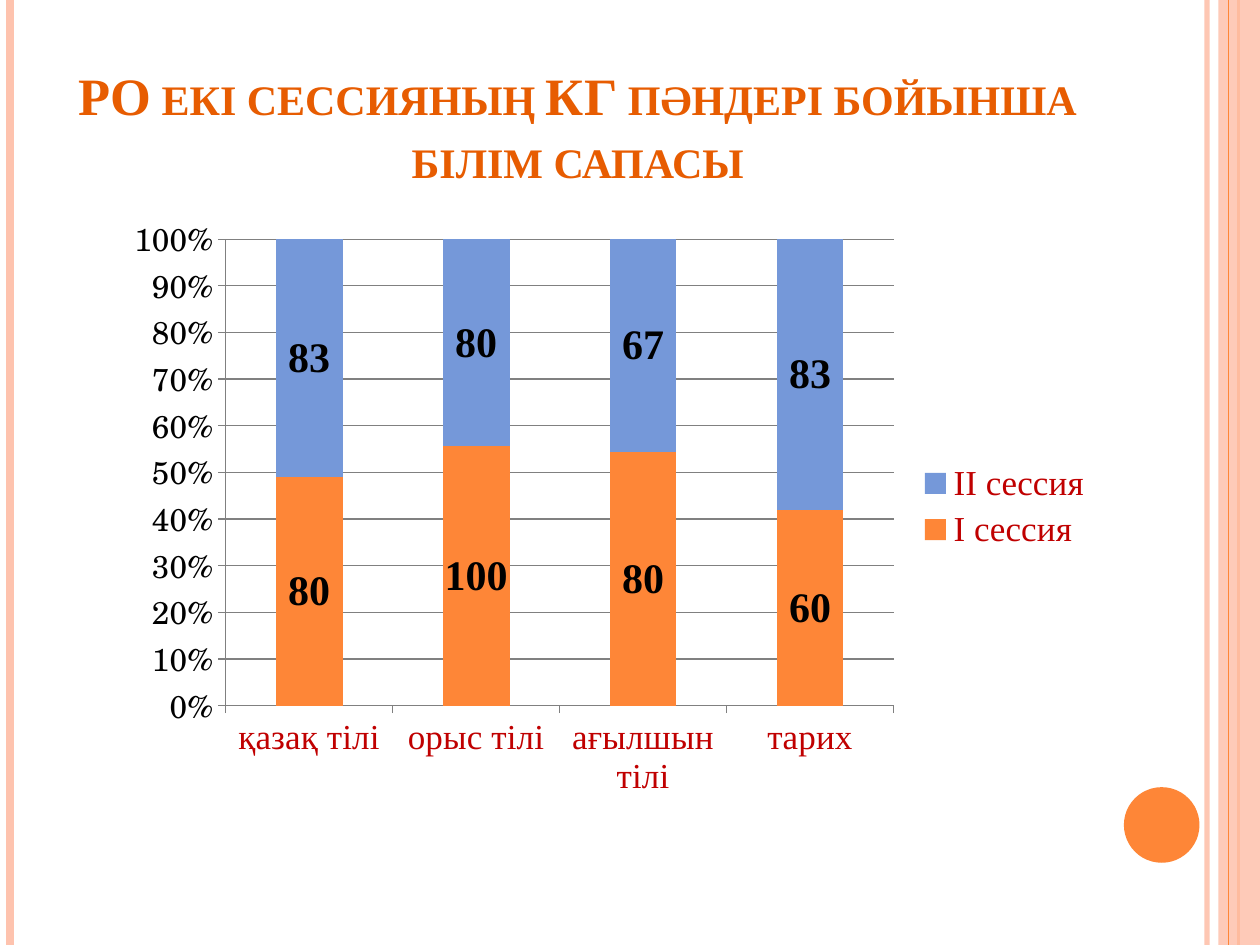
"""Build a slide with a percent-stacked chart of results over two sessions."""
from dataclasses import dataclass

from lxml.etree import SubElement as Sub
from pptx import Presentation
from pptx.chart.data import CategoryChartData as Data
from pptx.dml.color import RGBColor as Rgb
from pptx.enum.chart import XL_CHART_TYPE as Kind
from pptx.enum.chart import XL_LABEL_POSITION as Spot
from pptx.enum.chart import XL_LEGEND_POSITION as Side
from pptx.enum.chart import XL_TICK_MARK as Tick
from pptx.enum.shapes import MSO_SHAPE as Shape
from pptx.enum.text import MSO_ANCHOR as Anchor
from pptx.enum.text import PP_ALIGN as Align
from pptx.oxml.ns import qn
from pptx.util import Inches, Pt

WIDE, HIGH = Inches(10), Inches(7.5)
SERIF = "Times New Roman"
HUES = {
    "peach": "FEC3AE", "orange": "FE8637", "blue": "7598D9",
    "title": "E75C01", "red": "C00000", "black": "000000", "grey": "808080",
}


@dataclass
class Box:
    """Place and size as shares of the slide."""
    x: float
    y: float
    w: float
    h: float

    def emu(self) -> tuple:
        return (int(self.x * WIDE), int(self.y * HIGH),
                int(self.w * WIDE), int(self.h * HIGH))


@dataclass
class Rule:
    """A full-height vertical line."""
    x: float
    hue: str
    width: float
    alpha: int = 100


@dataclass
class Block:
    """A plain filled shape."""
    kind: Shape
    box: Box
    hue: str
    alpha: int = 100


@dataclass
class Run:
    """One series of the chart."""
    name: str
    vals: tuple
    hue: str


RULES = [
    Rule(0.958, "peach", 3, 93),
    Rule(0.008, "peach", 4.5),
    Rule(0.983, "orange", 1.5),
]
BAND = Block(Shape.RECTANGLE, Box(0.967, 0, 0.033, 1), "peach", 87)
EDGE = Rule(0.975, "orange", 0.75)
DISC = Block(Shape.OVAL, Box(0.892, 0.833, 0.06, 0.08), "orange")
HEAD = Box(0.05, 0.04, 0.817, 0.167)
PLOT = Box(0.091, 0.216, 0.787, 0.64)
TITLE = "РО екі сессияның КГ пәндері бойынша білім сапасы"
CATS = ("қазақ тілі", "орыс тілі", "ағылшын тілі", "тарих")
RUNS = [
    Run("І сессия", (80, 100, 80, 60), "orange"),
    Run("ІІ сессия", (83, 80, 67, 83), "blue"),
]


def paint(fill, hue: str) -> None:
    fill.solid()
    fill.fore_color.rgb = Rgb.from_string(HUES[hue])


def fade(item, alpha: int) -> None:
    if alpha < 100:
        tint = next(item.element.iter(qn("a:srgbClr")))
        Sub(tint, qn("a:alpha")).set("val", str(alpha * 1000))


def style(font, size: float, hue: str, face: str = SERIF,
          bold: bool = False) -> None:
    font.size, font.name, font.bold = Pt(size), face, bold
    paint(font.fill, hue)


def draw_rule(slide, rule: Rule) -> None:
    x = int(rule.x * WIDE)
    line = slide.shapes.add_connector(1, x, 0, x, HIGH)
    paint(line.line.fill, rule.hue)
    line.line.width = Pt(rule.width)
    Sub(line.element.spPr, qn("a:effectLst"))
    fade(line, rule.alpha)


def draw_block(slide, block: Block) -> None:
    shape = slide.shapes.add_shape(block.kind, *block.box.emu())
    shape.shadow.inherit = False
    paint(shape.fill, block.hue)
    shape.line.fill.background()
    fade(shape, block.alpha)


def draw_title(slide) -> None:
    box = slide.shapes.add_textbox(*HEAD.emu())
    frame = box.text_frame
    frame.word_wrap = True
    frame.vertical_anchor = Anchor.BOTTOM
    frame.text = TITLE
    para = frame.paragraphs[0]
    para.alignment = Align.CENTER
    style(para.runs[0].font, 30, "title", bold=True)
    next(box.element.iter(qn("a:rPr"))).set("cap", "small")


def draw_chart(slide) -> None:
    data = Data()
    data.categories = CATS
    for run in RUNS:
        data.add_series(run.name, run.vals)
    chart = slide.shapes.add_chart(
        Kind.COLUMN_STACKED_100, *PLOT.emu(), data).chart
    style(chart.font, 18, "black", "TeX Gyre Schola")
    chart.has_title = False
    chart.has_legend = True
    chart.legend.position = Side.RIGHT
    chart.legend.include_in_layout = False
    style(chart.legend.font, 20, "red")

    cat, val = chart.category_axis, chart.value_axis
    style(cat.tick_labels.font, 20, "red")
    val.tick_labels.number_format = "0%"
    val.tick_labels.number_format_is_linked = False
    val.has_major_gridlines = True
    for axis in (cat, val):
        axis.major_tick_mark = Tick.OUTSIDE
    for part in (cat, val, val.major_gridlines):
        paint(part.format.line.fill, "grey")
        part.format.line.width = Pt(0.75)

    plot = chart.plots[0]
    plot.gap_width, plot.overlap = 150, 100
    plot.vary_by_categories = False
    for run, series in zip(RUNS, plot.series):
        paint(series.format.fill, run.hue)
        tags = series.data_labels
        tags.show_value = True
        tags.position = Spot.CENTER
        style(tags.font, 24, "black", bold=True)


def main() -> None:
    deck = Presentation()
    deck.slide_width, deck.slide_height = WIDE, HIGH
    slide = deck.slides.add_slide(deck.slide_layouts[6])
    for rule in RULES:
        draw_rule(slide, rule)
    draw_block(slide, BAND)
    draw_rule(slide, EDGE)
    draw_block(slide, DISC)
    draw_title(slide)
    draw_chart(slide)
    deck.save("out.pptx")


if __name__ == "__main__":
    main()
